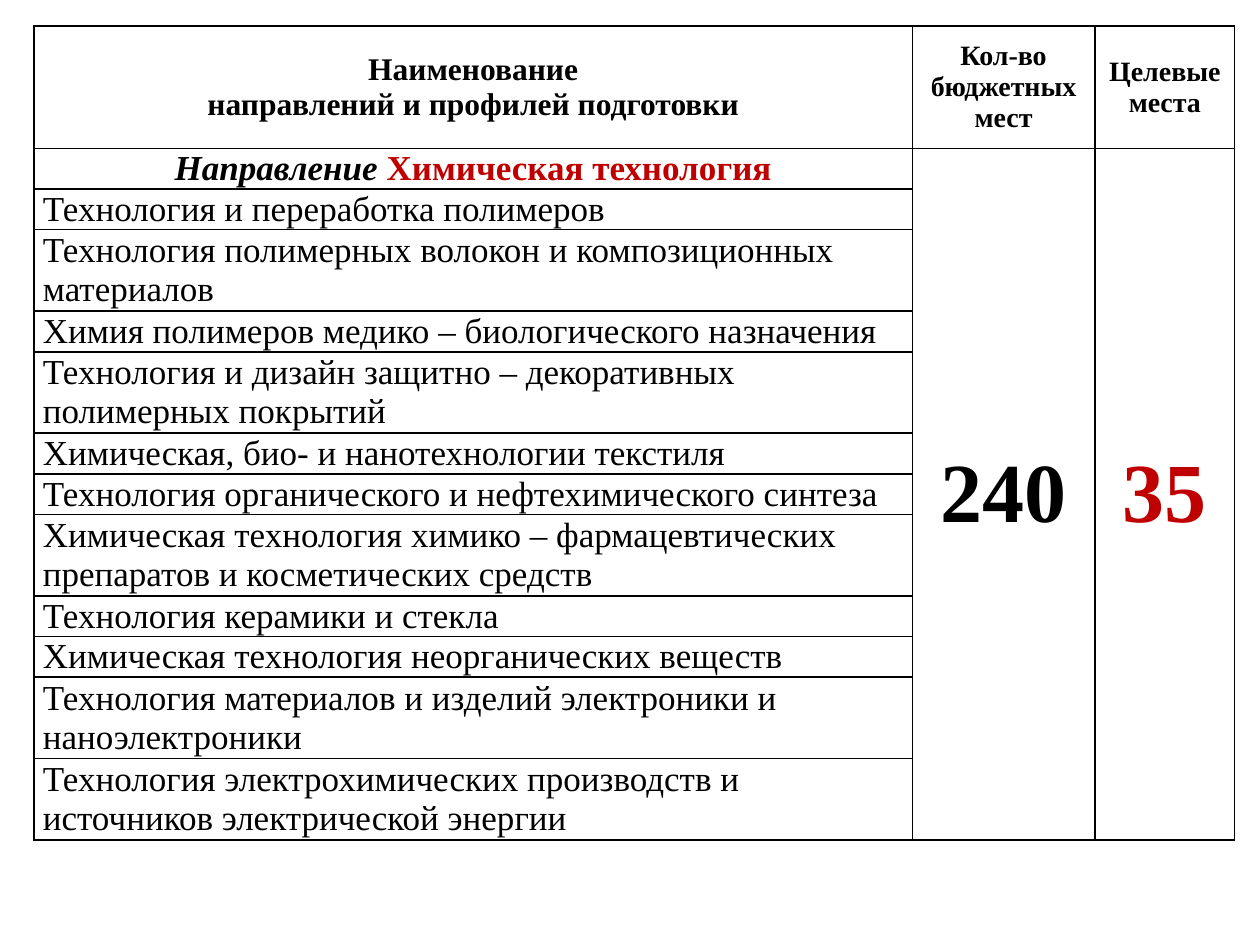
from dataclasses import dataclass

from lxml import etree
from pptx import Presentation
from pptx.dml.color import RGBColor
from pptx.enum import text
from pptx.oxml import ns
from pptx.util import Pt


@dataclass(frozen=True)
class Theme:
    """Colours, font and type sizes of the slide."""
    font: str = "Times New Roman"
    ink: RGBColor = RGBColor(0, 0, 0)
    accent: RGBColor = RGBColor(0xC0, 0, 0)
    paper: RGBColor = RGBColor(0xFF, 0xFF, 0xFF)
    header: float = 18
    side_header: float = 16
    body: float = 20
    total: float = 48
    border: float = 1


THEME = Theme()
COLUMN_WIDTHS = (501.8, 104.4, 79.9)
HEADER_HEIGHT = 69.8
LINE_HEIGHT = 23.25
HEADERS = (
    ("Наименование\nнаправлений и профилей подготовки", THEME.header),
    ("Кол-во бюджетных мест", THEME.side_header),
    ("Целевые места", THEME.side_header),
)
PROFILES = (
    ("Технология и переработка полимеров", 1),
    ("Технология полимерных волокон и композиционных материалов", 2),
    ("Химия полимеров медико – биологического назначения", 1),
    ("Технология и дизайн защитно – декоративных полимерных покрытий", 2),
    ("Химическая, био- и нанотехнологии текстиля", 1),
    ("Технология органического и нефтехимического синтеза", 1),
    ("Химическая технология химико – фармацевтических препаратов и косметических средств", 2),
    ("Технология керамики и стекла", 1),
    ("Химическая технология неорганических веществ", 1),
    ("Технология материалов и изделий электроники и наноэлектроники", 2),
    ("Технология электрохимических производств и источников электрической энергии", 2),
)
TOTALS = (("240", THEME.ink), ("35", THEME.accent))


def style_cell(cell, narrow_margins):
    """Give a cell its borders, fill, anchor and margins."""
    properties = cell._tc.get_or_add_tcPr()
    for side in ("lnL", "lnR", "lnT", "lnB"):
        line = etree.SubElement(properties, ns.qn(f"a:{side}"), w=str(Pt(THEME.border)))
        fill = etree.SubElement(line, ns.qn("a:solidFill"))
        etree.SubElement(fill, ns.qn("a:srgbClr"), val=str(THEME.ink))
    cell.fill.solid()
    cell.fill.fore_color.rgb = THEME.paper
    cell.vertical_anchor = text.MSO_ANCHOR.MIDDLE
    if narrow_margins:
        cell.margin_left = cell.margin_right = Pt(5)
        cell.margin_top = cell.margin_bottom = Pt(0)


def write_cell(cell, content, size, color=THEME.ink, bold=True, centered=True):
    """Write the text of a cell in one uniform format."""
    cell.text = content
    for paragraph in cell.text_frame.paragraphs:
        paragraph.alignment = text.PP_ALIGN.CENTER if centered else text.PP_ALIGN.LEFT
        font = paragraph.font
        font.name, font.size, font.bold = THEME.font, Pt(size), bold
        font.color.rgb = color


def write_direction(cell):
    """Write the heading of the direction with its name in the accent colour."""
    write_cell(cell, "Направление ", THEME.body)
    paragraph = cell.text_frame.paragraphs[0]
    paragraph.runs[0].font.italic = True
    name = paragraph.add_run()
    name.text = "Химическая технология"
    name.font.color.rgb = THEME.accent


def add_places_table(slide, left, top):
    """Place the table of profiles and places at the given corner."""
    heights = [HEADER_HEIGHT, LINE_HEIGHT] + [lines * LINE_HEIGHT for _, lines in PROFILES]
    table = slide.shapes.add_table(
        len(heights), len(COLUMN_WIDTHS), Pt(left), Pt(top),
        Pt(sum(COLUMN_WIDTHS)), Pt(sum(heights))).table
    table.first_row = table.horz_banding = False
    for column, width in zip(table.columns, COLUMN_WIDTHS):
        column.width = Pt(width)
    for row, height in zip(table.rows, heights):
        row.height = Pt(height)
        for index, cell in enumerate(row.cells):
            style_cell(cell, narrow_margins=index == 0)

    for index, (label, size) in enumerate(HEADERS):
        write_cell(table.cell(0, index), label, size)
    write_direction(table.cell(1, 0))
    for index, (profile, _) in enumerate(PROFILES, start=2):
        write_cell(table.cell(index, 0), profile, THEME.body, bold=False, centered=False)
    for index, (total, color) in enumerate(TOTALS, start=1):
        table.cell(1, index).merge(table.cell(len(heights) - 1, index))
        write_cell(table.cell(1, index), total, THEME.total, color)


def main():
    """Build the presentation and save it."""
    presentation = Presentation()
    presentation.slide_width, presentation.slide_height = Pt(720), Pt(540)
    slide = presentation.slides.add_slide(presentation.slide_layouts[6])
    add_places_table(slide, left=19.5, top=15)
    presentation.save("out.pptx")


if __name__ == "__main__":
    main()
